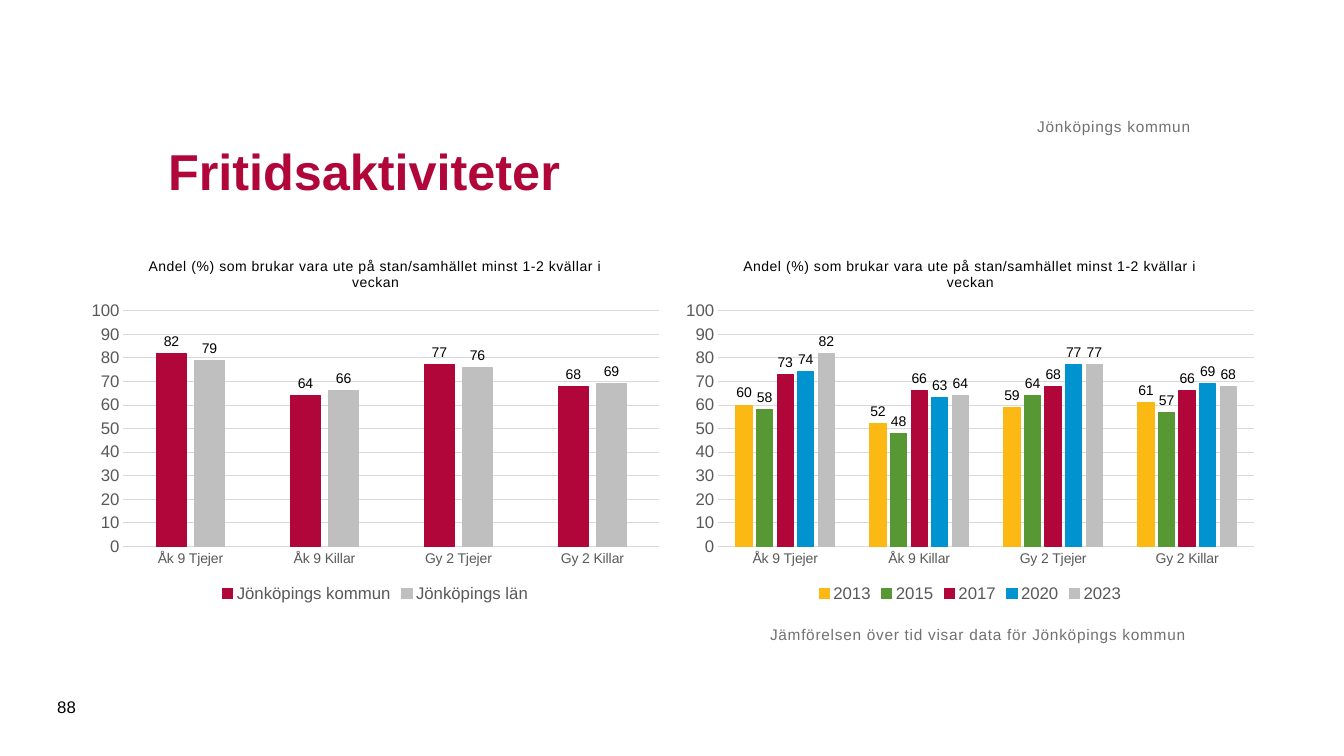
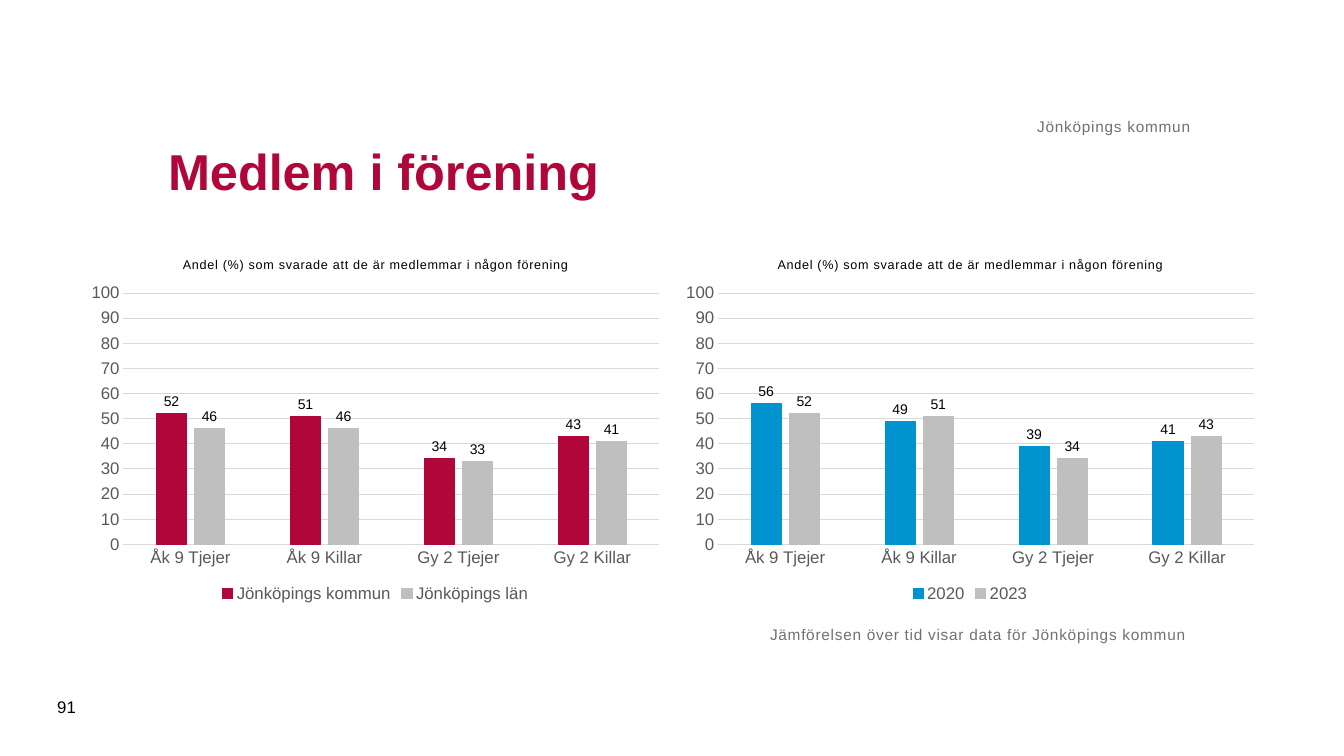
from pptx import Presentation
from pptx.chart.data import CategoryChartData
from pptx.dml.color import RGBColor
from pptx.enum.chart import XL_CHART_TYPE, XL_LABEL_POSITION, XL_LEGEND_POSITION, XL_TICK_MARK
from pptx.enum.text import MSO_ANCHOR, PP_ALIGN
from pptx.util import Pt

COLUMNS = XL_CHART_TYPE.COLUMN_CLUSTERED
OUTSIDE_END = XL_LABEL_POSITION.OUTSIDE_END
LEGEND_BOTTOM = XL_LEGEND_POSITION.BOTTOM
NO_TICKS = XL_TICK_MARK.NONE
TOP, MIDDLE, BOTTOM = MSO_ANCHOR.TOP, MSO_ANCHOR.MIDDLE, MSO_ANCHOR.BOTTOM
LEFT, RIGHT = PP_ALIGN.LEFT, PP_ALIGN.RIGHT

# Shared look
FONT = "Arial"
BLACK, TEXT_GREY, AXIS_GREY, GRID_GREY = "000000", "717171", "595959", "D9D9D9"
RED, SILVER, YELLOW, GREEN, BLUE = "B1063A", "BFBFBF", "FDB913", "579835", "0093D0"
SERIES_COLORS = {
    "Jönköpings kommun": RED, "Jönköpings län": SILVER,
    "2013": YELLOW, "2015": GREEN, "2017": RED, "2020": BLUE, "2023": SILVER,
}
CATEGORIES = ["Åk 9 Tjejer", "Åk 9 Killar", "Gy 2 Tjejer", "Gy 2 Killar"]
NUMBER_FORMAT = "#,##0;#,##0"
REGION = "Jönköpings kommun"
TIME_NOTE = "Jämförelsen över tid visar data för Jönköpings kommun"
CHART_LEFTS = [56.9, 481.7]
CHART_TOP, CHART_WIDTH, CHART_HEIGHT = 172.8, 422.6, 260.6

# Content: the left chart compares areas, the right one compares years
PAGES = [
    {
        "title": "Fritidsaktiviteter",
        "number": "88",
        "question": "Andel (%) som brukar vara ute på stan/samhället minst 1-2 kvällar i veckan",
        "question_size": 10,
        "category_size": 10,
        "charts": [
            {"Jönköpings kommun": [82, 64, 77, 68], "Jönköpings län": [79, 66, 76, 69]},
            {"2013": [60, 52, 59, 61], "2015": [58, 48, 64, 57], "2017": [73, 66, 68, 66],
             "2020": [74, 63, 77, 69], "2023": [82, 64, 77, 68]},
        ],
    },
    {
        "title": "Medlem i förening",
        "number": "91",
        "question": "Andel (%) som svarade att de är medlemmar i någon förening",
        "question_size": 9,
        "category_size": 12,
        "charts": [
            {"Jönköpings kommun": [52, 51, 34, 43], "Jönköpings län": [46, 46, 33, 41]},
            {"2020": [56, 49, 39, 41], "2023": [52, 51, 34, 43]},
        ],
    },
]


def style_font(font, size, color, bold=False):
    font.name = FONT
    font.size = Pt(size)
    font.bold = bold
    font.color.rgb = RGBColor.from_string(color)


def add_run(paragraph, text, size, color, bold=False, spacing=0):
    run = paragraph.add_run()
    run.text = text
    style_font(run.font, size, color, bold)
    if spacing:
        run._r.get_or_add_rPr().set("spc", str(int(spacing * 100)))


presentation = Presentation()
presentation.slide_width, presentation.slide_height = Pt(960), Pt(540)
blank_layout = presentation.slide_layouts[6]

for page in PAGES:
    slide = presentation.slides.add_slide(blank_layout)

    # Charts
    for left, values_by_series in zip(CHART_LEFTS, page["charts"]):
        chart_data = CategoryChartData(number_format=NUMBER_FORMAT)
        chart_data.categories = CATEGORIES
        for name, values in values_by_series.items():
            chart_data.add_series(name, values)
        chart = slide.shapes.add_chart(
            COLUMNS, Pt(left), Pt(CHART_TOP), Pt(CHART_WIDTH), Pt(CHART_HEIGHT), chart_data
        ).chart
        style_font(chart.font, 10, BLACK)

        chart.has_title = True
        chart.chart_title.include_in_layout = False
        add_run(chart.chart_title.text_frame.paragraphs[0], page["question"],
                page["question_size"], BLACK, spacing=0.5)

        chart.has_legend = True
        chart.legend.position = LEGEND_BOTTOM
        chart.legend.include_in_layout = False
        style_font(chart.legend.font, 12, AXIS_GREY)

        # Axes
        category_axis, value_axis = chart.category_axis, chart.value_axis
        for axis, size in [(category_axis, page["category_size"]), (value_axis, 12)]:
            axis.major_tick_mark = axis.minor_tick_mark = NO_TICKS
            style_font(axis.tick_labels.font, size, AXIS_GREY)
        value_axis.minimum_scale, value_axis.maximum_scale = 0, 100
        value_axis.major_unit = 10
        value_axis.tick_labels.number_format = NUMBER_FORMAT
        value_axis.tick_labels.number_format_is_linked = False
        value_axis.format.line.fill.background()
        for line in (category_axis.format.line, value_axis.major_gridlines.format.line):
            line.color.rgb = RGBColor.from_string(GRID_GREY)
            line.width = Pt(0.75)

        # Columns and their labels
        plot = chart.plots[0]
        plot.gap_width, plot.overlap = 219, -27
        plot.vary_by_categories = False
        for series in plot.series:
            series_color = RGBColor.from_string(SERIES_COLORS[series.name])
            series.format.fill.solid()
            series.format.fill.fore_color.rgb = series_color
            series.format.line.color.rgb = series_color
            series.format.line.width = Pt(0.75)
            labels = series.data_labels
            labels.show_value = True
            labels.position = OUTSIDE_END
            labels.number_format = NUMBER_FORMAT
            labels.number_format_is_linked = False
            style_font(labels.font, 10, BLACK)

    # Title, region, page number and note
    text_boxes = [
        (page["title"], (113, 70.6, 737.3, 102.2), 36, RED, True, 0, MIDDLE, LEFT, (7.2, 3.6)),
        (REGION, (113, 44.6, 737.3, 52.6), 11, TEXT_GREY, False, 0.5, BOTTOM, RIGHT, (0, 0)),
        (page["number"], (33.8, 490.3, 41, 28.8), 12, BLACK, False, 0, MIDDLE, LEFT, (7.2, 3.6)),
        (TIME_NOTE, (550, 446.4, 382.3, 67.7), 11, TEXT_GREY, False, 0.5, TOP, LEFT, (0, 0)),
    ]
    for text, box, size, color, bold, spacing, anchor, alignment, margins in text_boxes:
        text_frame = slide.shapes.add_textbox(*[Pt(length) for length in box]).text_frame
        text_frame.word_wrap = True
        text_frame.vertical_anchor = anchor
        text_frame.margin_left = text_frame.margin_right = Pt(margins[0])
        text_frame.margin_top = text_frame.margin_bottom = Pt(margins[1])
        paragraph = text_frame.paragraphs[0]
        paragraph.alignment = alignment
        add_run(paragraph, text, size, color, bold, spacing)

presentation.save("out.pptx")
